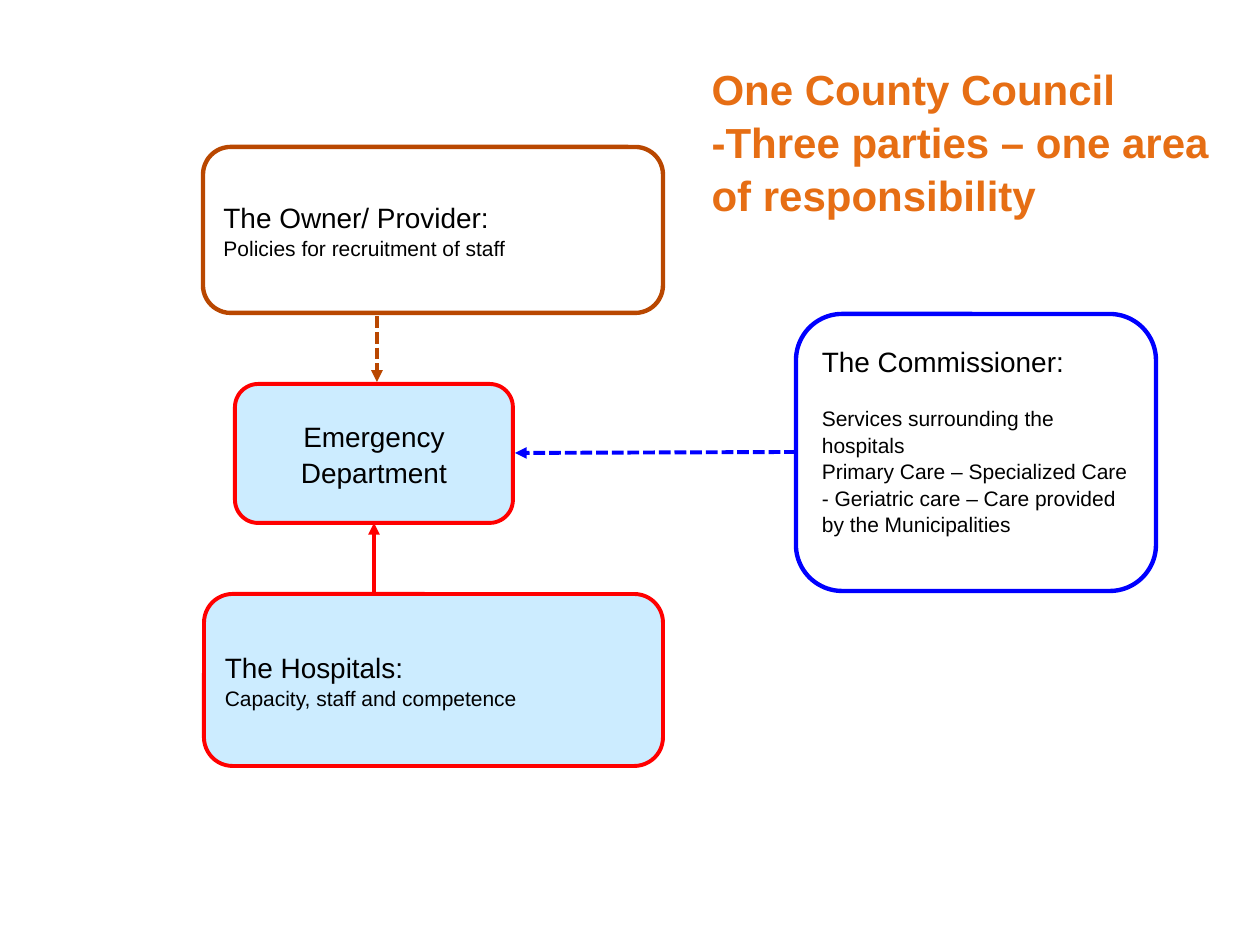
from lxml import etree
from pptx import Presentation
from pptx.dml.color import RGBColor
from pptx.enum.dml import MSO_LINE
from pptx.enum.shapes import MSO_CONNECTOR, MSO_SHAPE
from pptx.enum.text import MSO_ANCHOR, MSO_AUTO_SIZE, PP_ALIGN
from pptx.oxml.ns import qn
from pptx.util import Pt

PX = 914400 // 126
ROUND = MSO_SHAPE.ROUNDED_RECTANGLE
LINE = MSO_CONNECTOR.STRAIGHT
DASH = MSO_LINE.SQUARE_DOT
MIDDLE, TOP = MSO_ANCHOR.MIDDLE, MSO_ANCHOR.TOP
LEFT, CENTER = PP_ALIGN.LEFT, PP_ALIGN.CENTER
FIXED = MSO_AUTO_SIZE.NONE

BLACK = RGBColor(0, 0, 0)
WHITE = RGBColor(255, 255, 255)
SKY = RGBColor(0xCC, 0xEC, 0xFF)
RED = RGBColor(255, 0, 0)
BLUE = RGBColor(0, 0, 255)
BROWN = RGBColor(0xB9, 0x47, 0x00)
ORANGE = RGBColor(0xE6, 0x6E, 0x14)

deck = Presentation()
deck.slide_width, deck.slide_height = 1260 * PX, 945 * PX
slide = deck.slides.add_slide(deck.slide_layouts[5])


def add_box(place, fill, color, width, lines, align=LEFT):
    """Add a rounded box; lines holds (text, point size) pairs."""
    box = slide.shapes.add_shape(ROUND, *[n * PX for n in place])
    box.shadow.inherit = False
    box.fill.solid()
    box.fill.fore_color.rgb = fill
    box.line.color.rgb = color
    box.line.width = Pt(width)
    frame = box.text_frame
    frame.word_wrap = True
    frame.vertical_anchor = MIDDLE
    for i, (text, size) in enumerate(lines):
        para = frame.add_paragraph() if i else frame.paragraphs[0]
        para.alignment = align
        para.line_spacing = 1.05
        run = para.add_run()
        run.text = text
        run.font.name = "Arial"
        run.font.size = Pt(size)
        run.font.color.rgb = BLACK
    return frame


def add_arrow(ends, color, dash=None):
    arrow = slide.shapes.add_connector(LINE, *[n * PX for n in ends])
    arrow.line.color.rgb = color
    arrow.line.width = Pt(2.25)
    if dash:
        arrow.line.dash_style = dash
    etree.SubElement(arrow.line._get_or_add_ln(), qn("a:tailEnd"), type="triangle")
    etree.SubElement(arrow._element.spPr, qn("a:effectLst"))


# Title
title = slide.shapes.title
title.left, title.top, title.width, title.height = [n * PX for n in (699, 55, 536, 229)]
frame = title.text_frame
frame.auto_size = FIXED
frame.word_wrap = True
frame.vertical_anchor = TOP
para = frame.paragraphs[0]
para.alignment = LEFT
para.line_spacing = 1.05
for i, text in enumerate(["One County Council", "-Three parties – one area of responsibility"]):
    if i:
        para.add_line_break()
    run = para.add_run()
    run.text = text
    run.font.name = "Arial"
    run.font.size = Pt(24)
    run.font.bold = True
    run.font.color.rgb = ORANGE

# Department in the middle, with the three parties around it
add_box((235, 384, 278, 139), SKY, RED, 2.25, [("Emergency Department", 16)], CENTER)

add_arrow((377, 285, 377, 382), BROWN, DASH)
add_box((203, 147, 460, 166), WHITE, BROWN, 2.5,
        [("The Owner/ Provider:", 16), ("Policies for recruitment of staff", 12)])

duties = add_box((796, 314, 360, 277), WHITE, BLUE, 2.5, [
    ("The Commissioner:", 16),
    ("Services surrounding the hospitals", 12),
    ("Primary Care – Specialized Care - Geriatric care – Care provided by the Municipalities", 12),
])
duties.paragraphs[1].space_before = Pt(15)
duties.margin_bottom = 31 * PX
add_arrow((796, 452, 515, 453), BLUE, DASH)

add_arrow((374, 625, 374, 523), RED)
add_box((204, 594, 459, 172), SKY, RED, 2.25,
        [("The Hospitals:", 16), ("Capacity, staff and competence", 12)])

deck.save("out.pptx")
